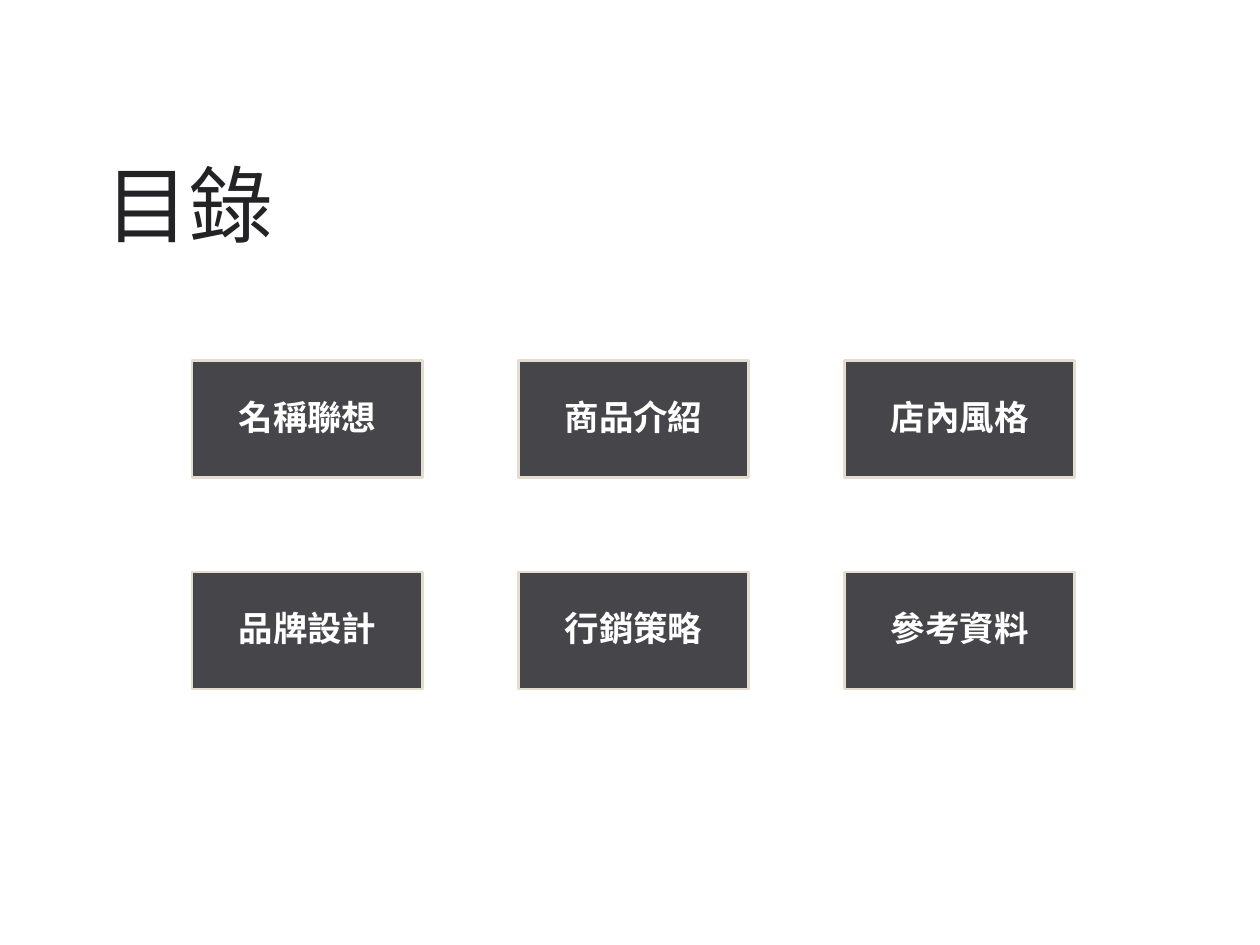
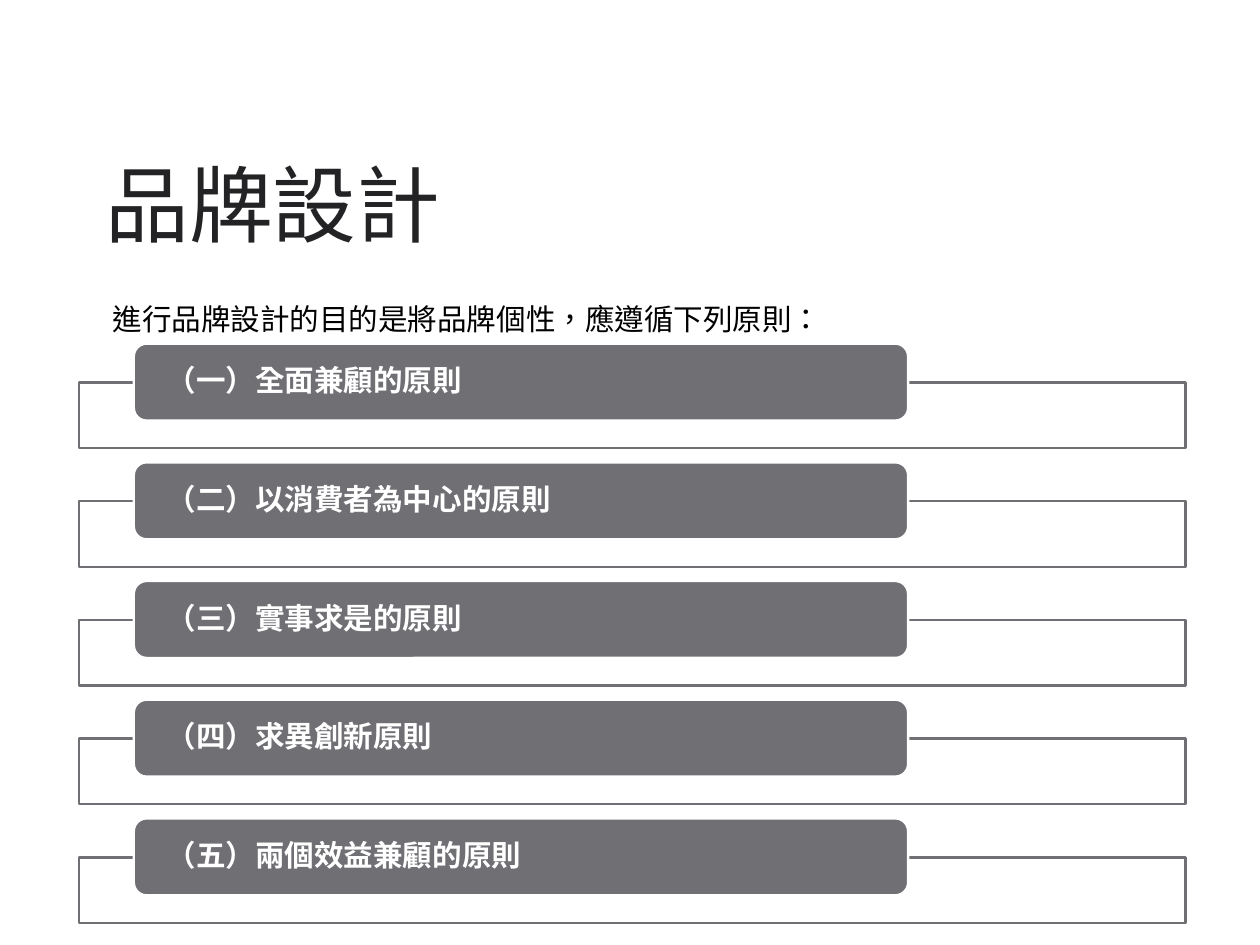
from pptx import Presentation
from pptx.dml.color import RGBColor
from pptx.enum import lang, shapes, text
from pptx.oxml.ns import qn
from pptx.util import Inches, Pt
from lxml import etree

COLORS = {"title": "232325", "tile": "46464A", "tile_edge": "E3DCCF",
          "bar": "6F6F74", "white": "FFFFFF", "black": "000000"}
SANS, CJK = "Arial", "Noto Sans CJK SC"
LEFT, CENTER, JUSTIFY = text.PP_ALIGN.LEFT, text.PP_ALIGN.CENTER, text.PP_ALIGN.JUSTIFY
TOP, MIDDLE, BOTTOM = text.MSO_ANCHOR.TOP, text.MSO_ANCHOR.MIDDLE, text.MSO_ANCHOR.BOTTOM
RECT, ROUND = shapes.MSO_SHAPE.RECTANGLE, shapes.MSO_SHAPE.ROUNDED_RECTANGLE


def rgb(name):
    """Return a palette colour."""
    return RGBColor.from_string(COLORS[name])


def write(sp, words, size, color, font=SANS, bold=False, align=LEFT,
          anchor=MIDDLE, spacing=0.9, pad=(0.14, 0.07)):
    """Write one formatted paragraph into a shape."""
    tf = sp.text_frame
    tf.word_wrap = True
    tf.auto_size = text.MSO_AUTO_SIZE.NONE
    tf.vertical_anchor = anchor
    tf.margin_left = tf.margin_right = Inches(pad[0])
    tf.margin_top = tf.margin_bottom = Inches(pad[1])
    p = tf.paragraphs[0]
    p.alignment, p.line_spacing = align, spacing
    p.space_before = Pt(0)
    r = p.add_run()
    r.text = words
    f = r.font
    f.name, f.size, f.bold = font, Pt(size), bold
    f.color.rgb = rgb(color)
    f.language_id = lang.MSO_LANGUAGE_ID.TRADITIONAL_CHINESE
    etree.SubElement(r._r.get_or_add_rPr(), qn("a:ea")).set("typeface", font)


def box(s, kind, left, top, width, height, fill, line, opacity=None):
    """Add a filled, outlined shape without a shadow."""
    sp = s.shapes.add_shape(kind, *map(Inches, (left, top, width, height)))
    sp.shadow.inherit = False
    sp.fill.solid()
    sp.fill.fore_color.rgb = rgb(fill)
    sp.line.color.rgb = rgb(line)
    sp.line.width = Pt(2)
    if opacity is not None:
        color = sp._element.spPr.find(qn("a:solidFill"))[0]
        etree.SubElement(color, qn("a:alpha")).set("val", str(opacity * 1000))
    return sp


def titled_slide(prs, title):
    """Add a title-only slide with the shared title style."""
    s = prs.slides.add_slide(prs.slide_layouts[5])
    sp = s.shapes.title
    sp.left, sp.top, sp.width, sp.height = map(Inches, (1.05, 1.47, 12.09, 1.46))
    write(sp, title, 68, "title", anchor=BOTTOM, spacing=1.0)
    return s


def tile_grid(s, left, top, labels, columns=3, step=(3.68, 2.39)):
    """Lay out labelled tiles row by row."""
    for i, label in enumerate(labels):
        row, col = divmod(i, columns)
        tile = box(s, RECT, left + col * step[0], top + row * step[1],
                   2.6, 1.32, "tile", "tile_edge")
        write(tile, label, 28, "white", bold=True, align=CENTER, pad=(0.12, 0.12))


def principle_list(s, left, top, principles, step=1.34):
    """Stack heading bars, each overlapping an outlined panel."""
    for i, principle in enumerate(principles):
        y = top + i * step
        box(s, RECT, left, y + 0.44, 12.49, 0.74, "white", "bar", opacity=90)
        bar = box(s, ROUND, left + 0.62, y, 8.74, 0.87, "bar", "white")
        write(bar, principle, 24, "white", bold=True, pad=(0.33, 0))


def contents_slide(prs):
    """Build the table of contents."""
    s = titled_slide(prs, "目錄")
    tile_grid(s, 2.17, 4.07, ["名稱聯想", "商品介紹", "店內風格",
                              "品牌設計", "行銷策略", "參考資料"])


def brand_slide(prs):
    """Build the brand design principles."""
    s = titled_slide(prs, "品牌設計")
    intro = s.shapes.add_textbox(*map(Inches, (1.13, 3.13, 11.89, 0.75)))
    write(intro, "進行品牌設計的目的是將品牌個性，應遵循下列原則：", 24, "black",
          font=CJK, align=JUSTIFY, anchor=TOP, spacing=1.5)
    principle_list(s, 0.89, 3.88, ["（一）全面兼顧的原則", "（二）以消費者為中心的原則",
                                   "（三）實事求是的原則", "（四）求異創新原則",
                                   "（五）兩個效益兼顧的原則"])


def main():
    """Build and save the presentation."""
    prs = Presentation()
    prs.slide_width, prs.slide_height = Inches(14.22), Inches(10.67)
    contents_slide(prs)
    brand_slide(prs)
    prs.save("out.pptx")


if __name__ == "__main__":
    main()
